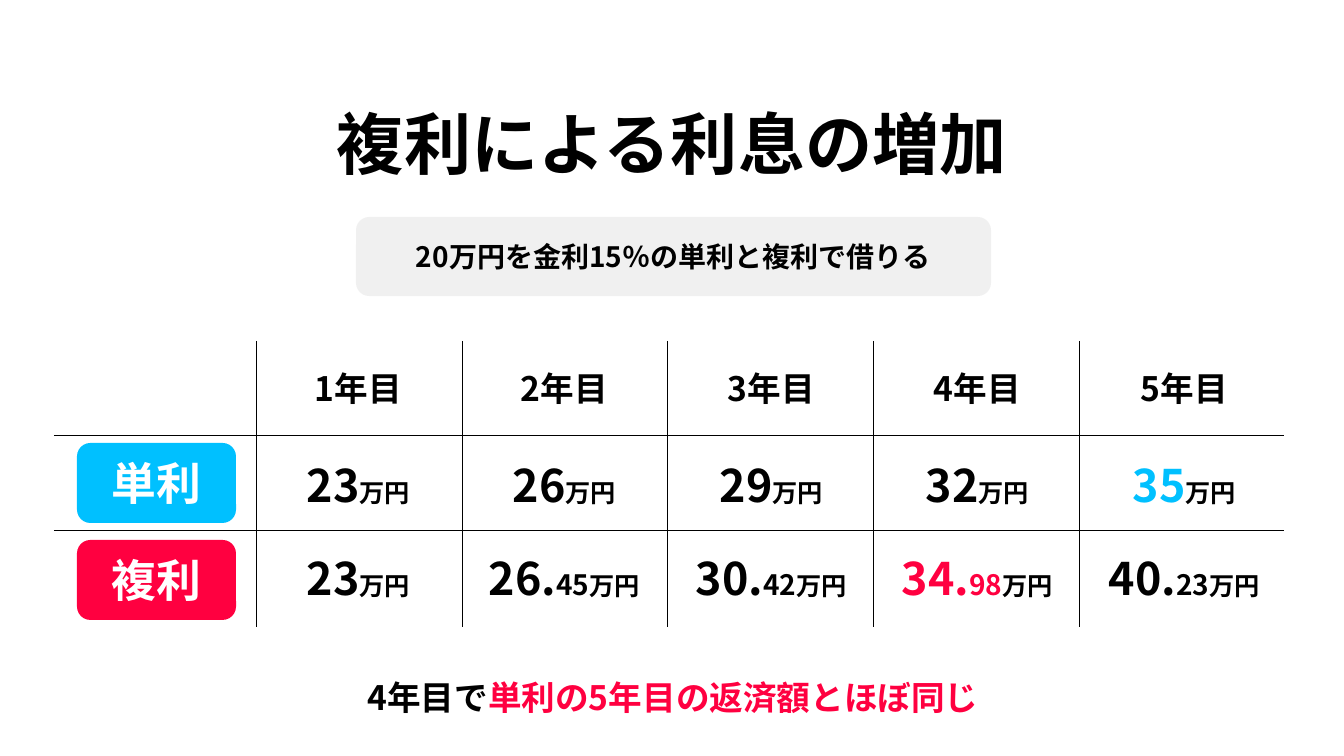
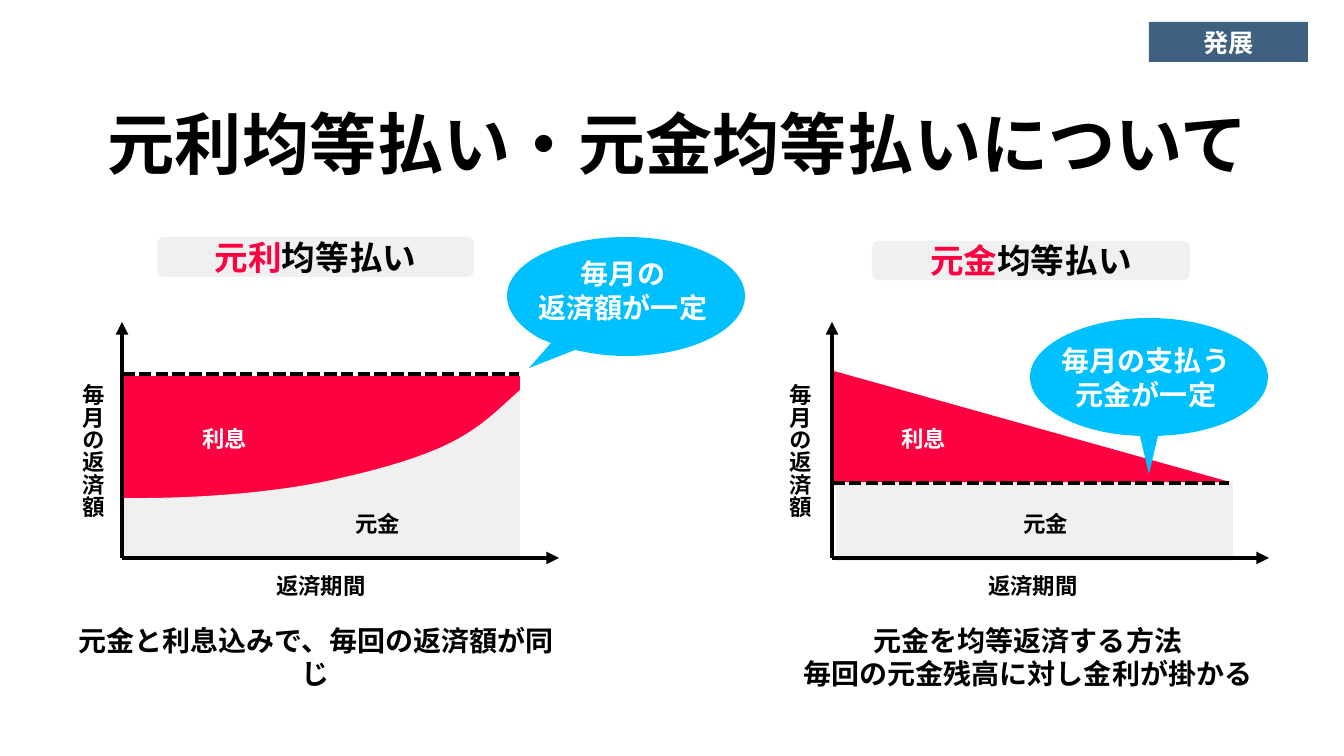
from lxml.etree import SubElement
from pptx import Presentation
from pptx.dml.color import RGBColor
from pptx.enum.dml import MSO_LINE
from pptx.enum.shapes import MSO_CONNECTOR, MSO_SHAPE
from pptx.enum.text import MSO_ANCHOR, MSO_AUTO_SIZE, PP_ALIGN
from pptx.oxml.ns import qn
from pptx.util import Pt

FONT = "Noto Sans CJK JP"
COLORS = {
    "black": "000000",
    "white": "FFFFFF",
    "gray": "F0F0F0",
    "red": "FF0040",
    "blue": "00C0FF",
    "navy": "406080",
}
SCALE = 914400 / 100.8


def px(*lengths):
    return [round(length * SCALE) for length in lengths]


def write(tf, paragraphs, size, color="black"):
    tf.word_wrap = True
    tf.auto_size = MSO_AUTO_SIZE.NONE
    tf.vertical_anchor = MSO_ANCHOR.MIDDLE
    tf.margin_left = tf.margin_top = tf.margin_right = tf.margin_bottom = 0
    for i, runs in enumerate(paragraphs):
        p = tf.add_paragraph() if i else tf.paragraphs[0]
        p.alignment = PP_ALIGN.CENTER
        p.font.size = Pt(size)
        p.font.bold = True
        p.font.color.rgb = RGBColor.from_string(COLORS[color])
        p.font.name = FONT
        SubElement(p._p.pPr.find(qn("a:defRPr")), qn("a:ea"), typeface=FONT)
        for text, run_color, run_size in runs:
            r = p.add_run()
            r.text = text
            r.font.name = FONT
            SubElement(r._r.rPr, qn("a:ea"), typeface=FONT)
            if run_color:
                r.font.color.rgb = RGBColor.from_string(COLORS[run_color])
            if run_size:
                r.font.size = Pt(run_size)


prs = Presentation()
prs.slide_width, prs.slide_height = px(1344, 756)

slides = []
for title, left in (("複利による利息の増加", 77), ("元利均等払い・元金均等払いについて", 83)):
    s = prs.slides.add_slide(prs.slide_layouts[5])
    sp = s.shapes.title
    sp.left, sp.top, sp.width, sp.height = px(left, 103, 1190, 79)
    write(sp.text_frame, [[(title, None, None)]], 48)
    slides.append(s)
compound, repayment = slides

ROUND, RECT = MSO_SHAPE.ROUNDED_RECTANGLE, MSO_SHAPE.RECTANGLE
for s, kind, box, fill, runs, size, color in (
    (compound, ROUND, (356, 217, 635, 79), "gray",
     [("20万円を金利15％の単利と複利で借りる", None, None)], 20, "black"),
    (compound, ROUND, (77, 443, 159, 80), "blue", [("単利", None, None)], 32, "white"),
    (compound, ROUND, (77, 540, 159, 80), "red", [("複利", None, None)], 32, "white"),
    (repayment, RECT, (1149, 22, 159, 40), "navy", [("発展", None, None)], 18, "white"),
    (repayment, ROUND, (157, 237, 317, 40), "gray",
     [("元利", "red", None), ("均等払い", None, None)], 24, "black"),
    (repayment, ROUND, (872, 241, 318, 39), "gray",
     [("元金", "red", None), ("均等払い", None, None)], 24, "black"),
    (repayment, RECT, (123, 376, 397, 129), "red", [], 16, "white"),
    (repayment, RECT, (836, 482, 397, 79), "gray", [], 16, "black"),
):
    sp = s.shapes.add_shape(kind, *px(*box))
    sp.shadow.inherit = False
    sp.fill.solid()
    sp.fill.fore_color.rgb = RGBColor.from_string(COLORS[fill])
    sp.line.fill.background()
    if runs:
        write(sp.text_frame, [runs], size, color)

principal = [
    [(123, 498)], [(123, 560)], [(520, 560)], [(520, 390)],
    [(477, 429), (459, 452), (332, 480)],
    [(273, 493), (193, 499), (123, 498)],
]
interest = [[(1230, 482)], [(834, 482)], [(834, 371)]]
fixed_payment = [
    [(626, 237)],
    [(692, 237), (745, 263), (745, 296)],
    [(745, 329), (692, 356), (626, 356)],
    [(609, 356), (594, 354), (580, 351)],
    [(575, 350)], [(529, 368)], [(551, 343)], [(541, 339)],
    [(520, 328), (507, 312), (507, 296)],
    [(507, 263), (560, 237), (626, 237)],
]
fixed_principal = [
    [(1149, 318)],
    [(1215, 318), (1268, 345), (1268, 377)],
    [(1268, 406), (1228, 430), (1173, 435)],
    [(1158, 436)], [(1149, 474)], [(1140, 436)], [(1125, 435)],
    [(1072, 430), (1030, 406), (1030, 377)],
    [(1030, 345), (1084, 318), (1149, 318)],
]
for segments, fill, texts, tail_room in (
    (principal, "gray", [], 0),
    (interest, "red", [], 0),
    (fixed_payment, "blue", ["毎月の", "返済額が一定"], 25),
    (fixed_principal, "blue", ["毎月の支払う", "元金が一定"], 37),
):
    start, *rest = [px(*point) for segment in segments for point in segment]
    builder = repayment.shapes.build_freeform(*start)
    builder.add_line_segments(rest, close=True)
    sp = builder.convert_to_shape()
    steps = iter(list(sp._element.iter(qn("a:lnTo"))))
    for segment in segments[1:]:
        first, *others = [next(steps) for point in segment]
        if others:
            first.tag = qn("a:cubicBezTo")
            for step in others:
                first.append(step[0])
                step.getparent().remove(step)
    sp.shadow.inherit = False
    sp.fill.solid()
    sp.fill.fore_color.rgb = RGBColor.from_string(COLORS[fill])
    sp.line.fill.background()
    if texts:
        write(sp.text_frame, [[(text, None, None)] for text in texts], 20, "white")
        sp.text_frame.margin_right, sp.text_frame.margin_bottom = px(6, tail_room)

lines = [(compound, (x, 341, x, 627), 0.5, None) for x in (256, 462, 667, 873, 1079)]
lines += [(compound, (54, y, 1284, y), 0.5, None) for y in (435, 530)]
for x, dash_y in ((122, 374), (832, 483)):
    lines += [
        (repayment, (x, 558, x, 322), 3, "arrow"),
        (repayment, (x, 558, x + 437, 558), 3, "arrow"),
        (repayment, (x, dash_y, x + 397, dash_y), 3, "dash"),
    ]
for s, ends, width, style in lines:
    line = s.shapes.add_connector(MSO_CONNECTOR.STRAIGHT, *px(*ends))
    line.line.width = Pt(width)
    line.line.color.rgb = RGBColor.from_string(COLORS["black"])
    if style == "dash":
        line.line.dash_style = MSO_LINE.SQUARE_DOT
    elif style == "arrow":
        SubElement(line.line._get_or_add_ln(), qn("a:tailEnd"), type="triangle")
    SubElement(line._element.spPr, qn("a:effectLst"))
for callout in list(repayment.shapes._spTree.iter(qn("p:sp")))[-2:]:
    repayment.shapes._spTree.append(callout)

labels = [
    (compound, (276, 658, 794, 79),
     [[("4年目で", None, None), ("単利の5年目の返済額とほぼ同じ", "red", None)]], 24, "black"),
    (repayment, (78, 617, 476, 80),
     [[("元金と利息込みで、毎回の返済額が同じ", None, None)]], 20, "black"),
    (repayment, (790, 617, 476, 80),
     [[("元金を均等返済する方法", None, None)],
      [("毎回の元金残高に対し金利が掛かる", None, None)]], 20, "black"),
]
YEN = ("万円", "black", 18)
for i, (simple, whole, decimals, simple_color, compound_color) in enumerate((
    ("23", "23", "", "black", "black"),
    ("26", "26.", "45", "black", "black"),
    ("29", "30.", "42", "black", "black"),
    ("32", "34.", "98", "black", "red"),
    ("35", "40.", "23", "blue", "black"),
)):
    x = 279 + 826 * i // 4
    amount = [(whole, compound_color, None)]
    if decimals:
        amount.append((decimals, compound_color, 20))
    labels += [
        (compound, (x, 349, 159, 79), [[(f"{i + 1}年目", None, None)]], 24, "black"),
        (compound, (x, 453, 159, 64), [[(simple, simple_color, None), YEN]], 32, "black"),
        (compound, (x - 20, 546, 199, 64), [amount + [YEN]], 32, "black"),
    ]
for period_x, interest_x, principal_x, amount_x in ((250, 154, 307, 73), (962, 853, 975, 780)):
    for text, box, color in (
        ("返済期間", (period_x, 566, 142, 39), "black"),
        ("利息", (interest_x, 419, 142, 39), "white"),
        ("元金", (principal_x, 504, 142, 39), "black"),
        ("毎月の返済額", (amount_x, 384, 39, 158), "black"),
    ):
        labels.append((repayment, box, [[(text, None, None)]], 16, color))

for s, box, paragraphs, size, color in labels:
    tf = s.shapes.add_textbox(*px(*box)).text_frame
    write(tf, paragraphs, size, color)
    if box[2] < box[3]:
        tf._txBody.bodyPr.set("vert", "eaVert")

prs.save("out.pptx")
